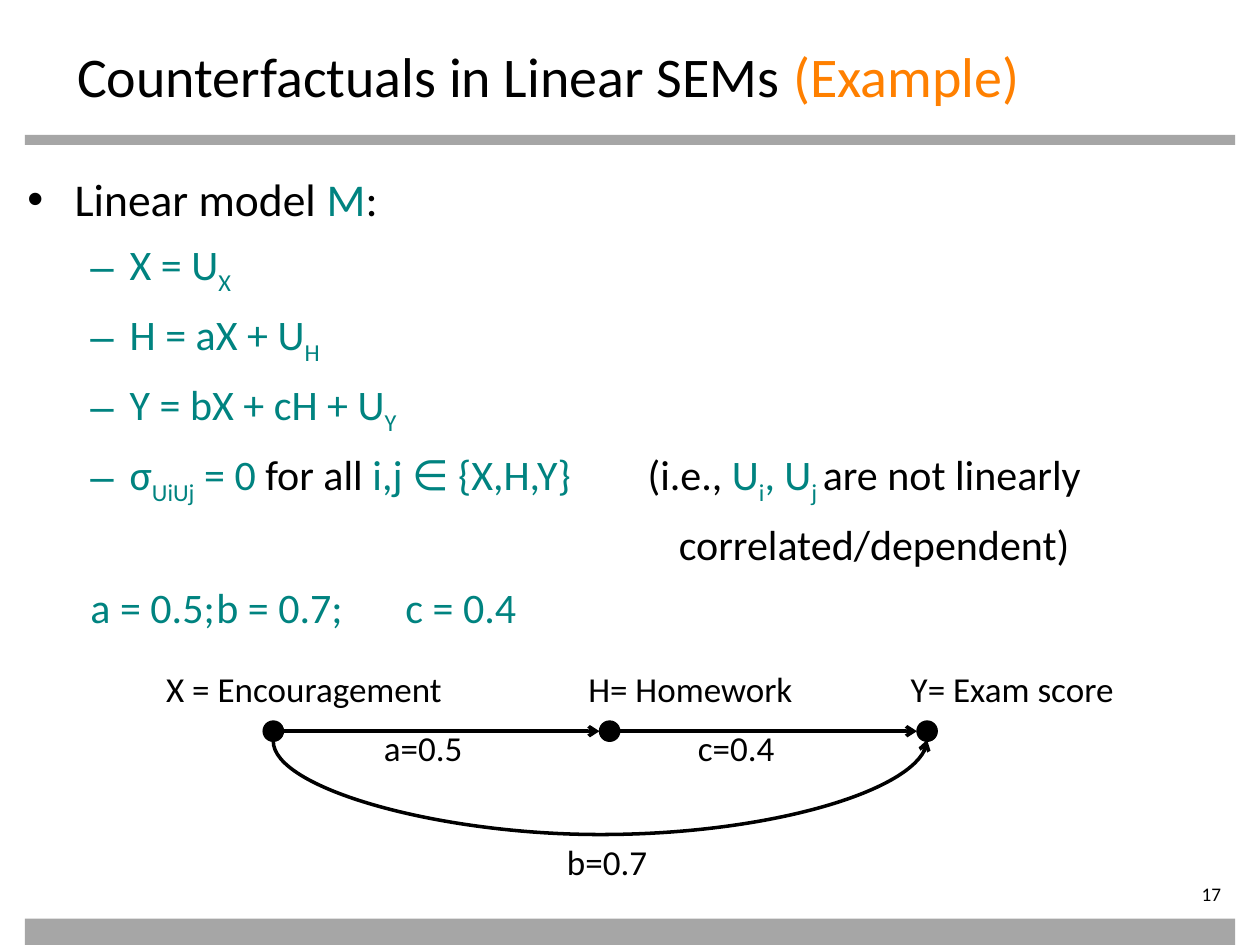
from lxml.etree import SubElement
from pptx import Presentation
from pptx.dml.color import RGBColor
from pptx.enum.shapes import MSO_CONNECTOR, MSO_SHAPE
from pptx.enum.text import MSO_ANCHOR, MSO_AUTO_SIZE, PP_ALIGN
from pptx.oxml.ns import qn
from pptx.util import Cm, Pt

COLORS = {"ink": "000000", "math": "008380", "accent": "FF8000", "bar": "A6A6A6"}
FONT = "Calibri"


def color(name):
    return RGBColor.from_string(COLORS[name])


def add_runs(paragraph, pieces, size):
    for text, tone, *subscript in pieces:
        run = paragraph.add_run()
        run.text = text
        run.font.name = FONT
        run.font.size = Pt(size)
        run.font.color.rgb = color(tone)
        if subscript:
            run.font._element.set("baseline", "-25000")


def set_box(shape, left, top, width, height):
    shape.left, shape.top = Cm(left), Cm(top)
    shape.width, shape.height = Cm(width), Cm(height)


def add_solid(slide, kind, tone, left, top, width, height):
    solid = slide.shapes.add_shape(kind, Cm(left), Cm(top), Cm(width), Cm(height))
    solid.shadow.inherit = False
    solid.fill.solid()
    solid.fill.fore_color.rgb = color(tone)
    solid.line.fill.background()
    return solid


def add_label(slide, text, left, top, width, height=1.12, size=20):
    label = slide.shapes.add_textbox(Cm(left), Cm(top), Cm(width), Cm(height))
    label.text_frame.word_wrap = False
    add_runs(label.text_frame.paragraphs[0], [(text, "ink")], size)
    return label


def format_paragraph(paragraph, margin, indent, bullet=None, tabs=()):
    properties = paragraph._p.get_or_add_pPr()
    properties.set("marL", str(Cm(margin)))
    properties.set("indent", str(Cm(indent)))
    if bullet:
        SubElement(properties, qn("a:buFont"), typeface="Arial")
        SubElement(properties, qn("a:buChar"), char=bullet)
    else:
        SubElement(properties, qn("a:buNone"))
    if tabs:
        tab_list = SubElement(properties, qn("a:tabLst"))
        for position in tabs:
            SubElement(tab_list, qn("a:tab"), pos=str(Cm(position)), algn="l")


def add_frame(slide, left, width):
    add_solid(slide, MSO_SHAPE.RECTANGLE, "bar", left, 2.72, width, 0.2)
    add_solid(slide, MSO_SHAPE.RECTANGLE, "bar", left, 18.52, width, 0.53)
    number = add_label(slide, "17", left + width - 2.82, 17.78, 2.79, 0.56, 11)
    frame = number.text_frame
    frame.margin_left = frame.margin_top = frame.margin_bottom = 0
    frame.paragraphs[0].alignment = PP_ALIGN.RIGHT


def fill_title(title, *box):
    set_box(title, *box)
    frame = title.text_frame
    frame.auto_size = MSO_AUTO_SIZE.NONE
    frame.vertical_anchor = MSO_ANCHOR.TOP
    frame.paragraphs[0].alignment = PP_ALIGN.LEFT
    add_runs(frame.paragraphs[0], [("Counterfactuals in Linear SEMs ", "ink"), ("(Example)", "accent")], 32)


def fill_model(body, *box):
    set_box(body, *box)
    frame = body.text_frame
    frame.auto_size = MSO_AUTO_SIZE.NONE
    heading = frame.paragraphs[0]
    heading.space_before = Pt(0)
    format_paragraph(heading, 0.95, -0.95, "•")
    add_runs(heading, [("Linear model ", "ink"), ("M", "math"), (":", "ink")], 26)

    equation = {"margin": 2.06, "indent": -0.79, "bullet": "–"}
    lines = [
        (equation, [("X = U", "math"), ("X", "math", True)]),
        (equation, [("H = aX + U", "math"), ("H", "math", True)]),
        (equation, [("Y = bX + cH + U", "math"), ("Y", "math", True)]),
        ({**equation, "tabs": [12.5]}, [
            ("σ", "math"), ("UiUj", "math", True), (" = 0 ", "math"), ("for all ", "ink"),
            ("i,j ∈ {X,H,Y}", "math"), ("\t(i.e., ", "ink"), ("U", "math"), ("i", "math", True),
            (", U", "math"), ("j ", "math", True), ("are not linearly", "ink")]),
        ({"margin": 13.13, "indent": 0}, [("correlated/dependent)", "ink")]),
        ({"margin": 1.27, "indent": 0, "tabs": [4.74, 8.23]},
         [("a = 0.5;\tb = 0.7;\tc = 0.4", "math")]),
    ]
    for layout, pieces in lines:
        paragraph = frame.add_paragraph()
        paragraph.level = 1
        paragraph.space_before = Pt(7.2)
        format_paragraph(paragraph, **layout)
        add_runs(paragraph, pieces, 24)


def add_arrow(slide, kind, start, end):
    arrow = slide.shapes.add_connector(kind, Cm(start[0]), Cm(start[1]), Cm(end[0]), Cm(end[1]))
    arrow.line.width = Pt(2)
    arrow.line.color.rgb = color("ink")
    SubElement(arrow.line._get_or_add_ln(), qn("a:tailEnd"), type="arrow")
    SubElement(arrow._element.spPr, qn("a:effectLst"))
    return arrow


def add_arc(slide, start, end, depth):
    arc = add_arrow(slide, MSO_CONNECTOR.CURVE, start, end)
    span, thickness = end[0] - start[0], 0.03
    set_box(arc, (start[0] + end[0] - thickness) / 2, start[1] - (span + thickness) / 2, thickness, span)
    transform = arc._element.spPr.find(qn("a:xfrm"))
    for key, value in {"rot": "5400000", "flipH": "1", "flipV": "1"}.items():
        transform.set(key, value)
    guides = arc._element.spPr.find(qn("a:prstGeom")).get_or_add_avLst()
    SubElement(guides, qn("a:gd"), name="adj1", fmla=f"val {round(-depth / thickness * 100000)}")


def add_causal_graph(slide, left, top):
    diameter = 0.41
    radius = diameter / 2
    axis = top + 1.4
    variables = [
        ("X = Encouragement", 0, 7.19, 2.41),
        ("H= Homework", 8.51, 5.69, 9.19),
        ("Y= Exam score", 15.01, 4.83, 15.59),
    ]
    centers = [left + center for *_, center in variables]
    for (name, offset, width, _), center in zip(variables, centers):
        add_label(slide, name, left + offset, top, width)
        node = add_solid(slide, MSO_SHAPE.OVAL, "ink", center - radius, axis - radius, diameter, diameter)
        node.line.color.rgb = color("ink")
        node.line.width = Pt(0.75)
    for source, target in zip(centers, centers[1:]):
        add_arrow(slide, MSO_CONNECTOR.STRAIGHT, (source + radius, axis), (target - radius, axis))
    add_arc(slide, (centers[0], axis + radius), (centers[-1], axis + radius), 1.88)
    for text, x, y in [("a=0.5", 4.39, 1.19), ("c=0.4", 10.72, 1.19), ("b=0.7", 8.08, 3.48)]:
        add_label(slide, text, left + x, top + y, 2.16)


def main():
    deck = Presentation()
    deck.slide_width, deck.slide_height = Cm(25.4), Cm(19.05)
    slide = deck.slides.add_slide(deck.slide_layouts[1])
    add_frame(slide, 0.5, 24.4)
    fill_title(slide.shapes.title, 1.3, 0.71, 22.86, 2.79)
    fill_model(slide.placeholders[1], 0.3, 3.33, 24.8, 9.4)
    add_causal_graph(slide, 3.1, 13.34)
    deck.save("out.pptx")


if __name__ == "__main__":
    main()
